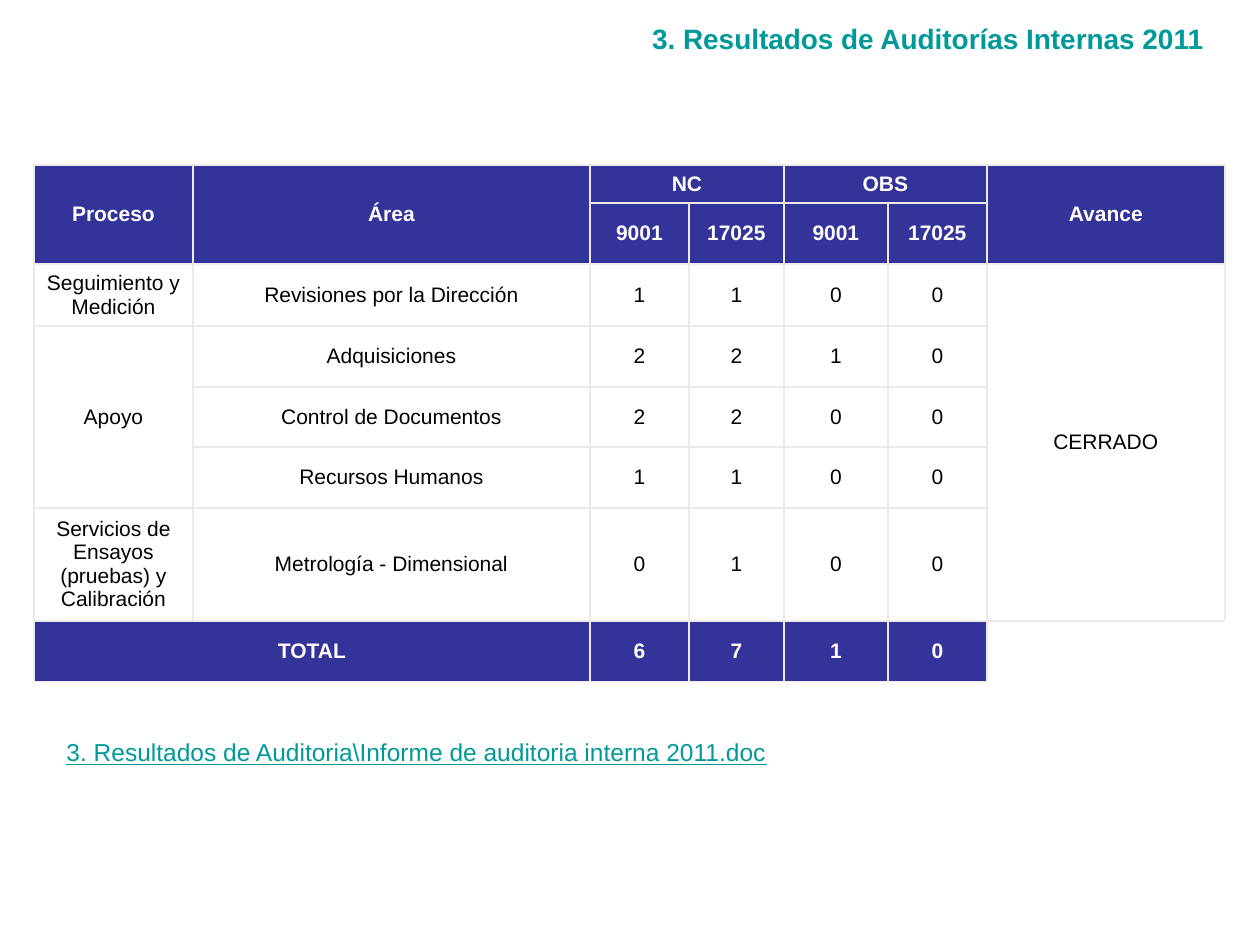
from lxml import etree
from pptx import Presentation
from pptx import util as u
from pptx.dml.color import RGBColor
from pptx.enum import text
from pptx.oxml import ns

PX = u.Inches(1) // 126
FONT = "Arial"
INDIGO = RGBColor(0x33, 0x33, 0x99)
TEAL = RGBColor(0x00, 0x99, 0x99)
GRID = RGBColor(0xEA, 0xEA, 0xEA)
WHITE = RGBColor(0xFF, 0xFF, 0xFF)
BLACK = RGBColor(0, 0, 0)

COLUMNS = [159, 397, 99, 95, 104, 99, 238]
ROWS = [38, 61, 62, 61, 60, 61, 113, 61]
CONTENT = [
    ["Proceso", "Área", "NC", "", "OBS", "", "Avance"],
    ["", "", "9001", "17025", "9001", "17025", ""],
    ["Seguimiento y Medición", "Revisiones por la Dirección", "1", "1", "0", "0", "CERRADO"],
    ["Apoyo", "Adquisiciones", "2", "2", "1", "0", ""],
    ["", "Control de Documentos", "2", "2", "0", "0", ""],
    ["", "Recursos Humanos", "1", "1", "0", "0", ""],
    ["Servicios de Ensayos (pruebas) y Calibración", "Metrología - Dimensional",
     "0", "1", "0", "0", ""],
    ["TOTAL", "", "6", "7", "1", "0", ""],
]
# First and last (row, column) of each merged area
MERGES = [((0, 0), (1, 0)), ((0, 1), (1, 1)), ((0, 2), (0, 3)), ((0, 4), (0, 5)),
          ((0, 6), (1, 6)), ((2, 6), (6, 6)), ((3, 0), (5, 0)), ((7, 0), (7, 1))]


def set_values(target, values):
    for name, value in values.items():
        setattr(target, name, value)


def write_paragraph(frame, words, alignment, color, **font_values):
    paragraph = frame.paragraphs[0]
    paragraph.alignment = alignment
    run = paragraph.add_run()
    run.text = words
    set_values(run.font, {"name": FONT, **font_values})
    run.font.color.rgb = color


def add_text(slide, box, words, alignment, wrap, **font_values):
    shape = slide.shapes.add_textbox(*(value * PX for value in box))
    frame = shape.text_frame
    set_values(frame, {"word_wrap": wrap, "auto_size": text.MSO_AUTO_SIZE.SHAPE_TO_FIT_TEXT})
    write_paragraph(frame, words, alignment, TEAL, **font_values)


def add_borders(cell, sides):
    properties = cell._tc.get_or_add_tcPr()
    for side in sides:
        line = etree.SubElement(properties, ns.qn(f"a:ln{side}"), w=str(u.Pt(1)))
        fill = etree.SubElement(line, ns.qn("a:solidFill"))
        etree.SubElement(fill, ns.qn("a:srgbClr"), val=str(GRID))


def format_cell(cell, words, filled, sides):
    set_values(cell, {"vertical_anchor": text.MSO_ANCHOR.MIDDLE,
                      "margin_left": 6 * PX, "margin_right": 6 * PX})
    add_borders(cell, sides)
    if filled:
        cell.fill.solid()
        cell.fill.fore_color.rgb = INDIGO
    else:
        cell.fill.background()
    if words:
        write_paragraph(cell.text_frame, words, text.PP_ALIGN.CENTER,
                        WHITE if filled else BLACK, size=u.Pt(12), bold=filled)


def add_audit_table(slide, left, top):
    frame = slide.shapes.add_table(len(ROWS), len(COLUMNS), left * PX, top * PX,
                                   sum(COLUMNS) * PX, sum(ROWS) * PX)
    table = frame.table
    set_values(table, {"first_row": False, "horz_banding": False})
    for column, width in zip(table.columns, COLUMNS):
        column.width = width * PX
    for row, height in zip(table.rows, ROWS):
        row.height = height * PX
    for first, last in MERGES:
        table.cell(*first).merge(table.cell(*last))

    # Header and total rows are filled, except the empty corner
    last_row, last_column = len(ROWS) - 1, len(COLUMNS) - 1
    for i, row in enumerate(CONTENT):
        for j, words in enumerate(row):
            corner = (i, j) == (last_row, last_column)
            filled = i in (0, 1, last_row) and not corner
            format_cell(table.cell(i, j), words, filled, "LT" if corner else "LRTB")


def main():
    presentation = Presentation()
    set_values(presentation, {"slide_width": 1260 * PX, "slide_height": 945 * PX})
    slide = presentation.slides.add_slide(presentation.slide_layouts[6])

    # Audit results
    add_audit_table(slide, 34, 165)

    # Title and report name
    add_text(slide, (581, 15, 635, 47), "3. Resultados de Auditorías Internas 2011",
             text.PP_ALIGN.RIGHT, True, size=u.Pt(16), bold=True)
    add_text(slide, (54, 731, 728, 43),
             "3. Resultados de Auditoria\\Informe de auditoria interna 2011.doc",
             text.PP_ALIGN.LEFT, False, size=u.Pt(14), underline=True)

    presentation.save("out.pptx")


if __name__ == "__main__":
    main()
